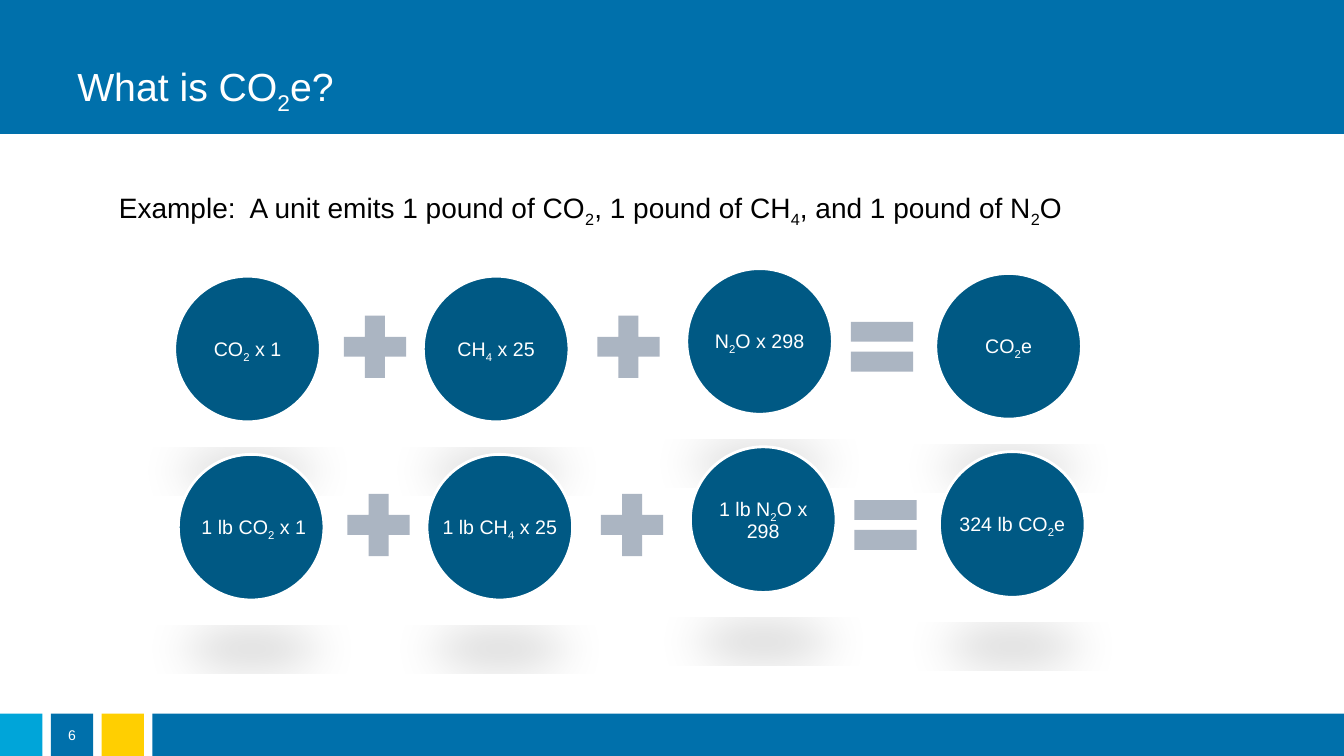
from dataclasses import dataclass

from lxml.etree import SubElement
from pptx import Presentation
from pptx.dml.color import RGBColor
from pptx.enum.shapes import MSO_SHAPE as Preset
from pptx.enum.text import MSO_ANCHOR as Anchor, MSO_AUTO_SIZE as AutoSize, PP_ALIGN as Align
from pptx.oxml.ns import qn
from pptx.util import Inches, Pt


@dataclass(frozen=True)
class Theme:
    font: str = "Arial"
    white: str = "FFFFFF"
    black: str = "000000"
    blue: str = "0070AB"
    cyan: str = "00A5D9"
    yellow: str = "FFCF01"
    circle: str = "005984"
    operator: str = "ABB5C2"
    title_size: int = 28
    body_size: int = 20
    circle_size: int = 14
    number_size: int = 10


class SlideBuilder:
    """Draws on one slide; boxes are (left, top, width, height) in percent of the slide."""

    def __init__(self, presentation, theme):
        self.theme = theme
        self.width = presentation.slide_width
        self.height = presentation.slide_height
        self.slide = presentation.slides.add_slide(presentation.slide_layouts[5])

    def place(self, box):
        sides = (self.width, self.height) * 2
        return [int(share * side / 100) for share, side in zip(box, sides)]

    def fill_text(self, frame, text, size, color, align=Align.LEFT, anchor=Anchor.MIDDLE):
        """Fill a frame; the character after each underscore is a subscript."""
        frame.vertical_anchor = anchor
        paragraph = frame.paragraphs[0]
        paragraph.alignment = align
        start, *rest = text.split("_")
        pieces = [(start, False)]
        for part in rest:
            pieces += [(part[0], True), (part[1:], False)]
        for piece, is_subscript in pieces:
            if not piece:
                continue
            run = paragraph.add_run()
            run.text = piece
            run.font.name = self.theme.font
            run.font.size = Pt(size)
            run.font.color.rgb = RGBColor.from_string(color)
            if is_subscript:
                run.font._element.set("baseline", "-25000")
        return paragraph

    def shape(self, preset, box, color):
        shape = self.slide.shapes.add_shape(preset, *self.place(box))
        shape.shadow.inherit = False
        shape.fill.solid()
        shape.fill.fore_color.rgb = RGBColor.from_string(color)
        shape.line.fill.background()
        return shape

    def title(self, text, box):
        title = self.slide.shapes.title
        title.left, title.top, title.width, title.height = self.place(box)
        title.text_frame.auto_size = AutoSize.NONE
        self.fill_text(title.text_frame, text, self.theme.title_size, self.theme.white,
                       anchor=Anchor.BOTTOM)
        # Bring the title in front of the header band
        self.slide.shapes._spTree.append(title._element)

    def text(self, text, box, size, color, align=Align.LEFT):
        frame = self.slide.shapes.add_textbox(*self.place(box)).text_frame
        frame.word_wrap = True
        self.fill_text(frame, text, size, color, align)

    def circle(self, text, box, inset):
        circle = self.shape(Preset.OVAL, box, self.theme.circle)
        circle.line.color.rgb = RGBColor.from_string(self.theme.white)
        circle.line.width = Pt(2)
        self.cast_shadow(circle)
        frame = circle.text_frame
        frame.word_wrap = True
        frame.margin_left = frame.margin_right = Inches(inset)
        frame.margin_top = frame.margin_bottom = Inches(inset)
        paragraph = self.fill_text(frame, text, self.theme.circle_size, self.theme.white,
                                   Align.CENTER)
        paragraph.line_spacing = 0.9

    def cast_shadow(self, shape):
        """Flattened soft shadow on the ground below the shape."""
        effects = shape._element.spPr.find(qn("a:effectLst"))
        shadow = SubElement(effects, qn("a:outerShdw"), blurRad=str(Pt(35)), dist=str(Pt(25)),
                            dir="5400000", sx="90000", sy="-19000", algn="b", rotWithShape="0")
        color = SubElement(shadow, qn("a:srgbClr"), val=self.theme.black)
        SubElement(color, qn("a:alpha"), val="22000")


# Percent positions of the equation parts
CIRCLE_CORNERS = [(13, 36.53), (31.5, 36.53), (51.1, 35.53), (69.63, 36.17)]
CIRCLE_WIDTH, CIRCLE_HEIGHT = 10.84, 19.27
OPERATORS = [Preset.MATH_PLUS, Preset.MATH_PLUS, Preset.MATH_EQUAL]
OPERATOR_LEFT, OPERATOR_TOP, OPERATOR_STEP = 24.75, 40.27, 18.86
ROW_SHIFT, ROW_STEP = 0.27, 23.57

# Labels of each equation and the text inset of its circles in inches
EQUATIONS = [
    (["CO_2 x 1", "CH_4 x 25", "N_2O x 298", "CO_2e"], 0.03),
    ([" 1 lb CO_2 x 1", "1 lb CH_4 x 25", "1 lb N_2O x 298", "324 lb CO_2e"], -0.11),
]

TILE_STEP, TILE_WIDTH = 3.78, 3.15
FOOTER_TOP, FOOTER_HEIGHT = 94.4, 5.6


def main():
    presentation = Presentation()
    presentation.slide_width = Inches(13.33)
    presentation.slide_height = Inches(7.5)
    theme = Theme()
    builder = SlideBuilder(presentation, theme)

    # Header
    builder.shape(Preset.RECTANGLE, (0, 0, 100, 17.73), theme.blue)
    builder.title("What is CO_2e?", (5, 3.6, 90, 12.4))

    # Footer tiles, bar and slide number
    for index, color in enumerate([theme.cyan, theme.blue, theme.yellow]):
        builder.shape(Preset.RECTANGLE,
                      (index * TILE_STEP, FOOTER_TOP, TILE_WIDTH, FOOTER_HEIGHT), color)
    bar_left = 3 * TILE_STEP
    builder.shape(Preset.RECTANGLE,
                  (bar_left, FOOTER_TOP, 100 - bar_left, FOOTER_HEIGHT), theme.blue)
    builder.text("6", (TILE_STEP, 95.2, TILE_WIDTH, 4), theme.number_size, theme.white,
                 Align.CENTER)

    # Example sentence
    builder.text("Example:  A unit emits 1 pound of CO_2, 1 pound of CH_4, and 1 pound of N_2O",
                 (8.1, 24.8, 72.4, 5.87), theme.body_size, theme.black)

    # Equations
    for row, (labels, inset) in enumerate(EQUATIONS):
        shift, drop = row * ROW_SHIFT, row * ROW_STEP
        for index, operator in enumerate(OPERATORS):
            left = OPERATOR_LEFT + index * OPERATOR_STEP + shift
            builder.shape(operator, (left, OPERATOR_TOP + drop, 6.3, 11.2), theme.operator)
        for label, (left, top) in zip(labels, CIRCLE_CORNERS):
            builder.circle(label, (left + shift, top + drop, CIRCLE_WIDTH, CIRCLE_HEIGHT), inset)

    presentation.save("out.pptx")


if __name__ == "__main__":
    main()
